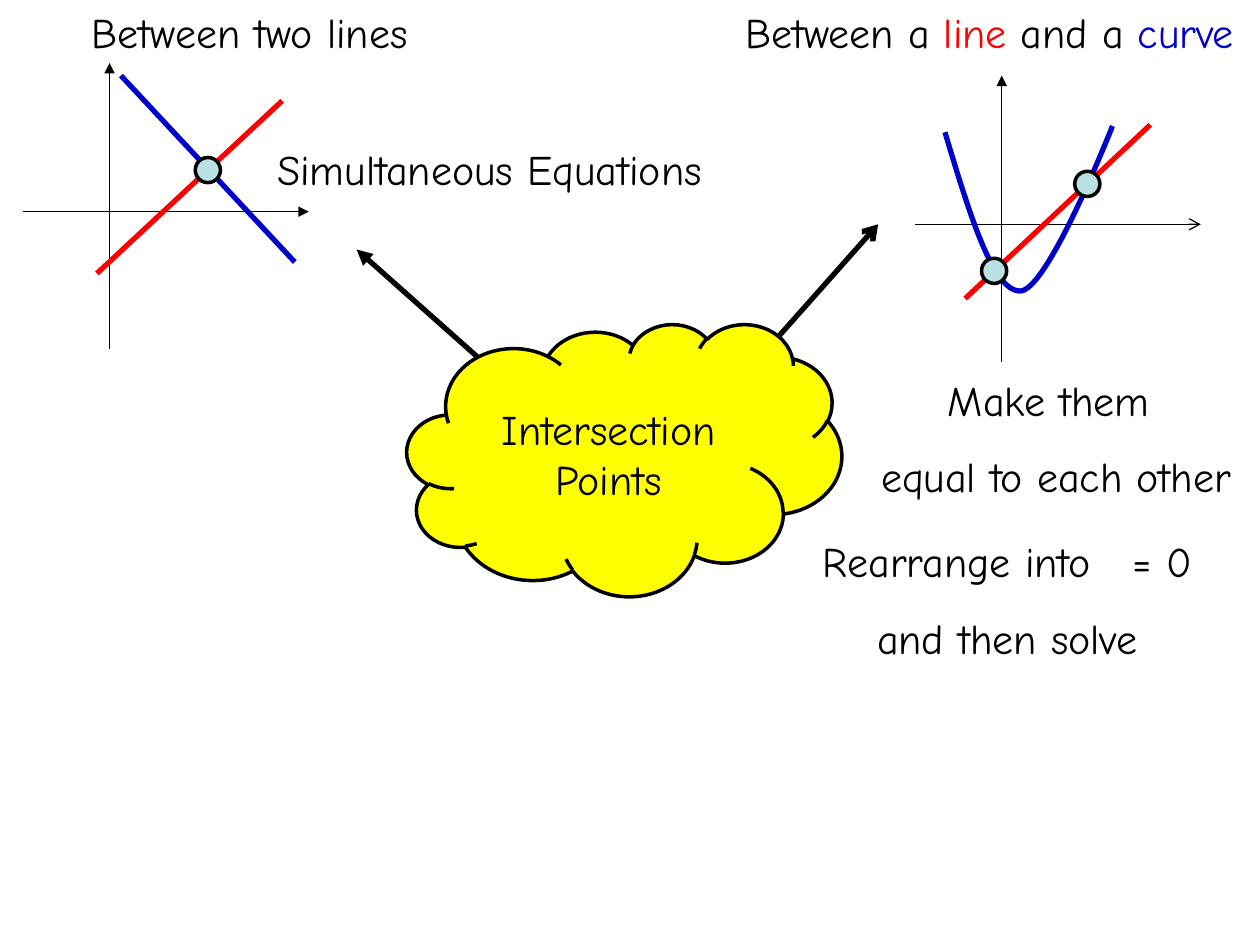
from dataclasses import dataclass

from lxml import etree
from pptx import Presentation
from pptx.dml.color import RGBColor
from pptx.enum.shapes import MSO_CONNECTOR, MSO_SHAPE
from pptx.enum.text import MSO_ANCHOR, MSO_AUTO_SIZE, PP_ALIGN
from pptx.oxml.ns import qn
from pptx.util import Inches, Pt

STRAIGHT = MSO_CONNECTOR.STRAIGHT
CLOUD, OVAL = MSO_SHAPE.CLOUD, MSO_SHAPE.OVAL
CENTER, TOP, MIDDLE = PP_ALIGN.CENTER, MSO_ANCHOR.TOP, MSO_ANCHOR.MIDDLE
GROW = MSO_AUTO_SIZE.SHAPE_TO_FIT_TEXT


@dataclass(frozen=True)
class Theme:
    font: str = "Comic Neue"
    text_size: float = 24
    space_before: float = 15
    axis_width: float = 0.75
    outline_width: float = 2
    graph_width: float = 3
    black: RGBColor = RGBColor(0, 0, 0)
    red: RGBColor = RGBColor(0xFF, 0, 0)
    blue: RGBColor = RGBColor(0, 0, 0xCC)
    yellow: RGBColor = RGBColor(0xFF, 0xFF, 0)
    pale_blue: RGBColor = RGBColor(0xBB, 0xE0, 0xE3)


class GraphSlide:
    """Draws graphs and labels on one slide in a shared style."""

    def __init__(self, slide, theme):
        self.slide = slide
        self.theme = theme

    def line(self, start, end, color, width, head=None, shapes=None):
        shapes = self.slide.shapes if shapes is None else shapes
        points = [Inches(value) for value in (*start, *end)]
        connector = shapes.add_connector(STRAIGHT, *points)
        connector.line.color.rgb = color
        connector.line.width = Pt(width)
        properties = connector._element.spPr
        if head:
            outline = properties.find(qn("a:ln"))
            etree.SubElement(outline, qn("a:tailEnd"), type=head)
        etree.SubElement(properties, qn("a:effectLst"))

    def axes(self, x, top, horizontal_head="triangle"):
        length, across = 2.27, top + 1.18
        left = x - 0.69
        group = self.slide.shapes.add_group_shape()
        color, width = self.theme.black, self.theme.axis_width
        self.line((x, top + length), (x, top), color, width, "triangle", group.shapes)
        self.line((left, across), (left + length, across), color, width,
                  horizontal_head, group.shapes)

    def curve(self, start, segments, color, steps=24):
        builder = self.slide.shapes.build_freeform(Inches(start[0]), Inches(start[1]))
        points = []
        for first, second, end in segments:
            controls = (start, first, second, end)
            for step in range(1, steps + 1):
                t = step / steps
                weights = ((1 - t) ** 3, 3 * t * (1 - t) ** 2, 3 * t * t * (1 - t), t ** 3)
                points.append([Inches(sum(weight * value for weight, value in zip(weights, values)))
                               for values in zip(*controls)])
            start = end
        builder.add_line_segments(points, close=False)
        shape = builder.convert_to_shape()
        shape.fill.background()
        shape.line.color.rgb = color
        shape.line.width = Pt(self.theme.graph_width)
        shape.shadow.inherit = False

    def outlined(self, kind, left, top, width, height, fill):
        box = [Inches(value) for value in (left, top, width, height)]
        shape = self.slide.shapes.add_shape(kind, *box)
        shape.fill.solid()
        shape.fill.fore_color.rgb = fill
        shape.line.color.rgb = self.theme.black
        shape.line.width = Pt(self.theme.outline_width)
        shape.shadow.inherit = False
        return shape

    def intersection(self, x, y, size=0.2):
        self.outlined(OVAL, x - size / 2, y - size / 2, size, size, self.theme.pale_blue)

    def cloud(self, left, top, width, height, text):
        shape = self.outlined(CLOUD, left, top, width, height, self.theme.yellow)
        self.add_text(shape.text_frame, [[(text, self.theme.black)]], MIDDLE)

    def label(self, left, top, width, height, paragraphs, wrap=False):
        box = [Inches(value) for value in (left, top, width, height)]
        frame = self.slide.shapes.add_textbox(*box).text_frame
        self.add_text(frame, paragraphs, TOP, wrap)
        frame.auto_size = GROW

    def add_text(self, frame, paragraphs, anchor, wrap=True):
        frame.word_wrap = wrap
        frame.vertical_anchor = anchor
        for index, runs in enumerate(paragraphs):
            paragraph = frame.add_paragraph() if index else frame.paragraphs[0]
            paragraph.alignment = CENTER
            paragraph.space_before = Pt(self.theme.space_before)
            for text, color in runs:
                run = paragraph.add_run()
                run.text = text
                run.font.name = self.theme.font
                run.font.size = Pt(self.theme.text_size)
                run.font.color.rgb = color


def main():
    presentation = Presentation()
    presentation.slide_width, presentation.slide_height = Inches(10), Inches(7.5)
    theme = Theme()
    black, red, blue, thick = theme.black, theme.red, theme.blue, theme.graph_width
    page = GraphSlide(presentation.slides.add_slide(presentation.slide_layouts[6]), theme)

    page.line((3.82, 2.86), (2.83, 1.98), black, thick, "triangle")
    page.line((6.18, 2.67), (6.97, 1.78), black, thick, "arrow")
    page.cloud(3.23, 2.57, 3.45, 2.16, "Intersection Points")

    page.axes(0.87, 0.5)
    page.label(0.49, 0, 2.98, 0.5, [[("Between two lines", black)]])
    page.line((0.77, 2.17), (2.24, 0.8), red, thick)
    page.line((0.96, 0.6), (2.34, 2.08), blue, thick)
    page.intersection(1.65, 1.35)
    page.label(1.97, 1.09, 3.83, 0.5, [[("Simultaneous Equations", black)]])

    page.axes(7.95, 0.6, "arrow")
    page.label(6.78, 2.92, 3.2, 1.11,
               [[("Make them ", black)], [("equal to each other", black)]])
    page.label(6.27, 4.2, 3.45, 1.11,
               [[("Rearrange into   = 0", black)], [("and then solve", black)]], wrap=True)
    page.line((7.66, 2.37), (9.13, 0.99), red, thick)
    page.curve((7.5, 1.05), [((7.69, 1.68), (7.88, 2.32), (8.1, 2.31)),
                             ((8.32, 2.3), (8.83, 1), (8.83, 1))], blue)
    for x, y in ((8.63, 1.46), (7.89, 2.15)):
        page.intersection(x, y)
    page.label(5.71, 0, 4.29, 0.5, [[("Between a ", black), ("line", red),
                                     (" and a ", black), ("curve", blue)]])

    presentation.save("out.pptx")


if __name__ == "__main__":
    main()
